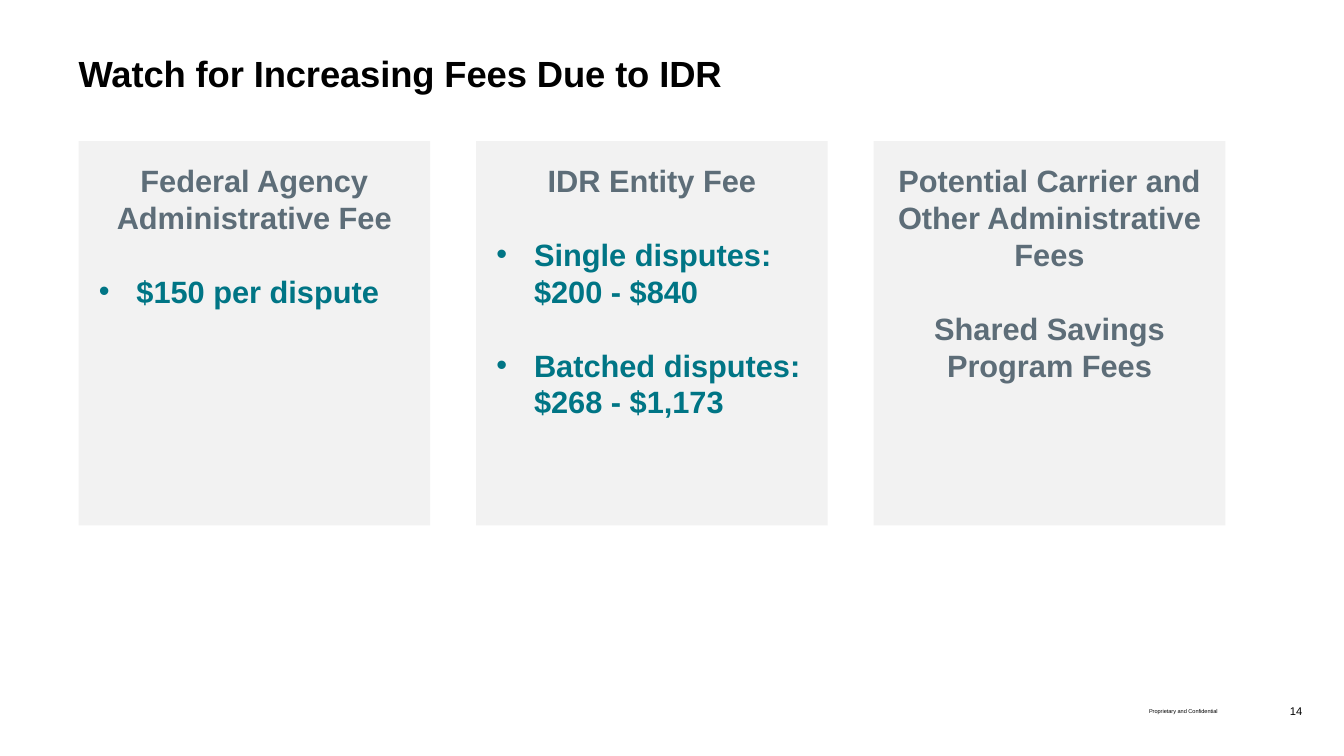
import pptx
import pptx.dml.color
import pptx.enum.shapes
import pptx.enum.text
import pptx.oxml.ns
import pptx.util
from lxml import etree

Cm = pptx.util.Cm
Pt = pptx.util.Pt
ALIGN = pptx.enum.text.PP_ALIGN
ANCHOR = pptx.enum.text.MSO_ANCHOR

BLACK, SLATE, TEAL, PANEL = "000000", "5D6D78", "007585", "F2F2F2"


def color(hex_string):
    return pptx.dml.color.RGBColor.from_string(hex_string)


class SlideBuilder:
    font_name = "Arial"
    card_size = 22
    card_line = 26.4
    card_inset = 0.51
    bullet_indent = 0.95

    def __init__(self, slide):
        self.slide = slide

    def frame(self, shape, inset=0, anchor=ANCHOR.TOP):
        text_frame = shape.text_frame
        text_frame.word_wrap = True
        text_frame.auto_size = pptx.enum.text.MSO_AUTO_SIZE.NONE
        text_frame.vertical_anchor = anchor
        text_frame.margin_left = text_frame.margin_right = Cm(inset)
        text_frame.margin_top = text_frame.margin_bottom = Cm(inset)
        return text_frame

    def run(self, paragraph, text, size, hex_string, bold=False):
        run = paragraph.add_run()
        run.text = text
        run.font.name = self.font_name
        run.font.size = Pt(size)
        run.font.bold = bold
        run.font.color.rgb = color(hex_string)
        return run

    def bullet(self, paragraph):
        properties = paragraph._p.get_or_add_pPr()
        properties.set("marL", str(Cm(self.bullet_indent)))
        properties.set("indent", str(-Cm(self.bullet_indent)))
        for tag, name, value in (("a:buFont", "typeface", self.font_name),
                                 ("a:buChar", "char", "•")):
            element = etree.SubElement(properties, pptx.oxml.ns.qn(tag))
            element.set(name, value)

    def title(self, text, left, top, width, height):
        shape = self.slide.shapes.title
        shape.left, shape.top = Cm(left), Cm(top)
        shape.width, shape.height = Cm(width), Cm(height)
        paragraph = self.frame(shape).paragraphs[0]
        paragraph.alignment = ALIGN.LEFT
        run = self.run(paragraph, text, 26, BLACK, bold=True)
        run.font._element.set("spc", "-10")

    def footer(self, text, size, left, top, width, height):
        shape = self.slide.shapes.add_textbox(Cm(left), Cm(top), Cm(width), Cm(height))
        paragraph = self.frame(shape, anchor=ANCHOR.MIDDLE).paragraphs[0]
        paragraph.alignment = ALIGN.RIGHT
        self.run(paragraph, text, size, BLACK)

    def card(self, headings, bullets, left, top, width, height):
        shape = self.slide.shapes.add_shape(
            pptx.enum.shapes.MSO_SHAPE.RECTANGLE, Cm(left), Cm(top), Cm(width), Cm(height))
        shape.shadow.inherit = False
        shape.fill.solid()
        shape.fill.fore_color.rgb = color(PANEL)
        shape.line.fill.background()
        text_frame = self.frame(shape, self.card_inset)
        entries = [(text, False) for text in headings] + [(text, True) for text in bullets]
        for index, (text, bulleted) in enumerate(entries):
            paragraph = text_frame.add_paragraph() if index else text_frame.paragraphs[0]
            if bulleted:
                self.bullet(paragraph)
            paragraph.alignment = ALIGN.LEFT if bulleted else ALIGN.CENTER
            paragraph.line_spacing = Pt(self.card_line)
            paragraph.space_before = Pt(self.card_line if index else 0)
            for number, line in enumerate(text.split("\n")):
                if number:
                    paragraph.add_line_break()
                self.run(paragraph, line, self.card_size, TEAL if bulleted else SLATE, bold=True)


def main():
    presentation = pptx.Presentation()
    presentation.slide_width, presentation.slide_height = Cm(33.87), Cm(19.05)
    builder = SlideBuilder(presentation.slides.add_slide(presentation.slide_layouts[5]))

    # Title
    builder.title("Watch for Increasing Fees Due to IDR", 1.98, 1.3, 29.74, 2.24)

    # Fee cards
    cards = [
        (["Federal Agency Administrative Fee"], ["$150 per dispute"]),
        (["IDR Entity Fee"],
         ["Single disputes: $200 - $840", "Batched disputes:\n$268 - $1,173"]),
        (["Potential Carrier and Other Administrative Fees",
          "Shared Savings Program Fees"], []),
    ]
    for column, (headings, bullets) in enumerate(cards):
        builder.card(headings, bullets, 1.98 + column * 10.02, 3.56, 8.86, 9.68)

    # Footer
    builder.footer("Proprietary and Confidential", 4, 16.69, 17.42, 14, 1.02)
    builder.footer("14", 8, 31.7, 17.4, 1.12, 1.02)

    presentation.save("out.pptx")


if __name__ == "__main__":
    main()
